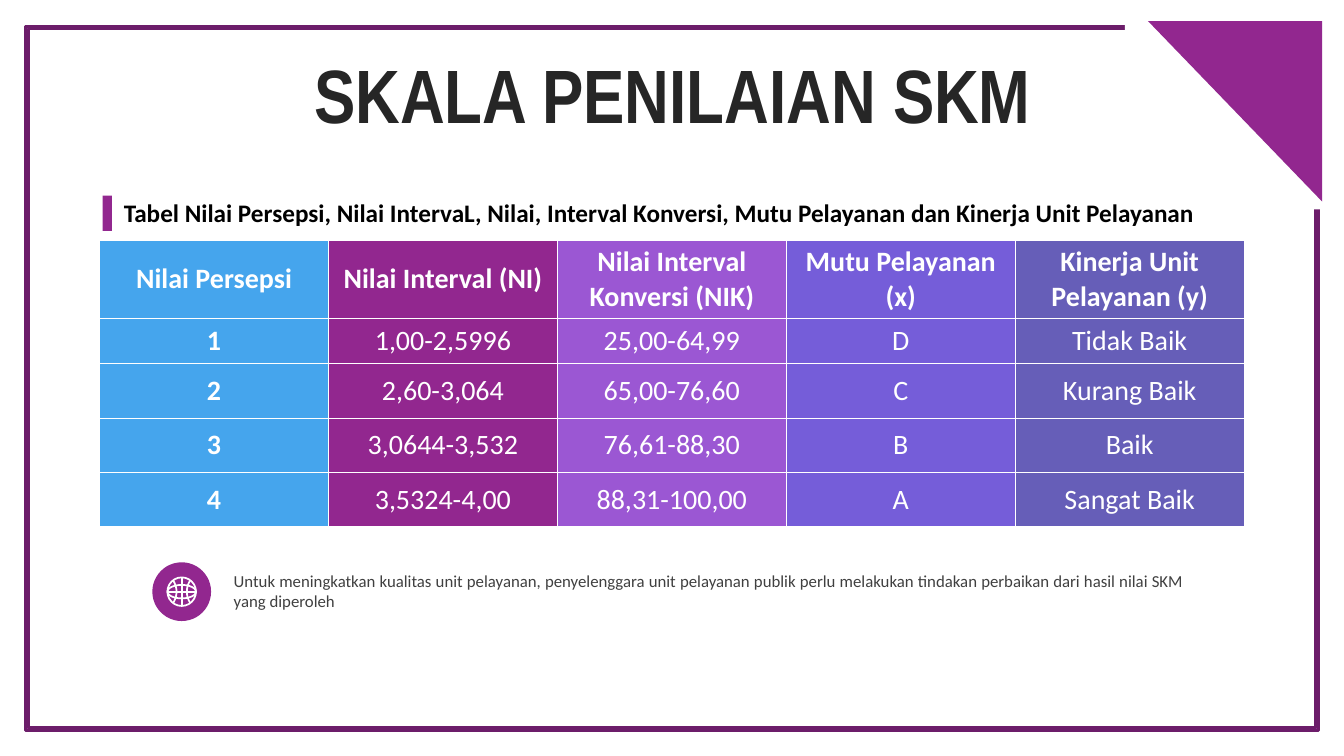
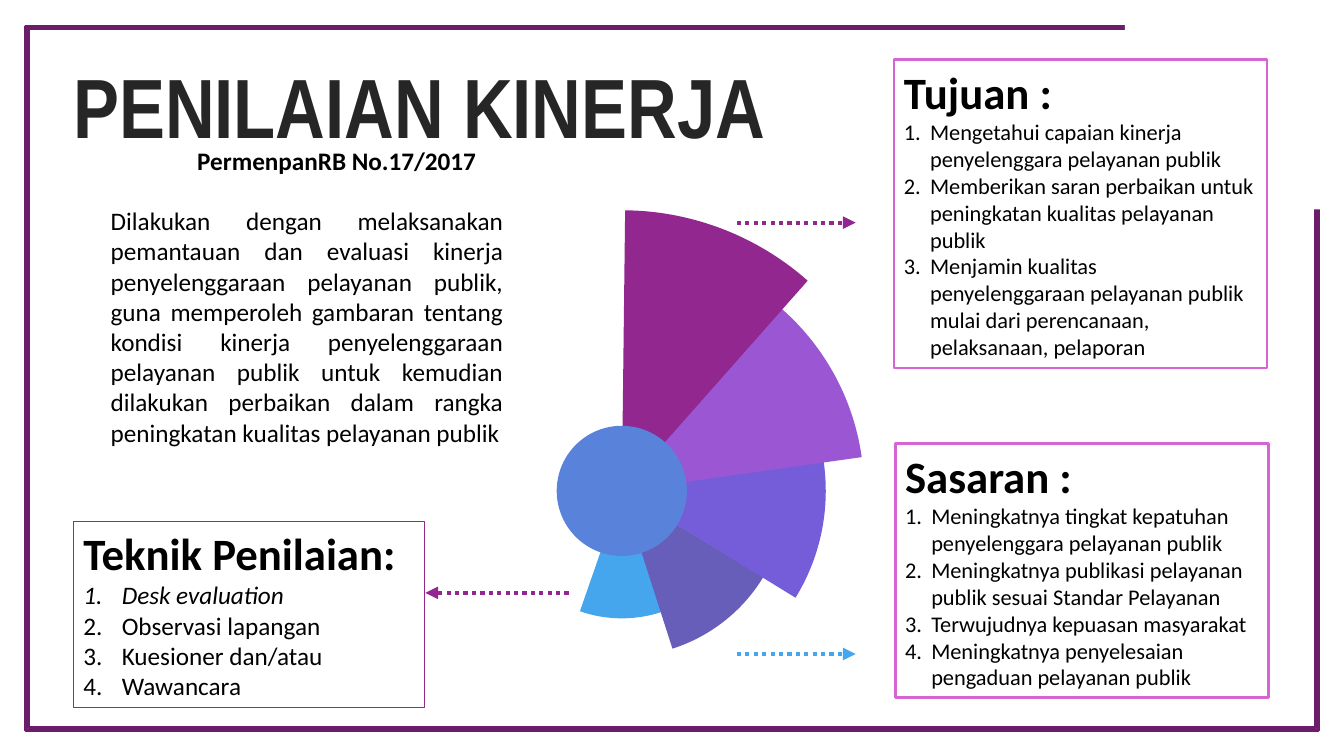
from lxml.etree import SubElement
from pptx import Presentation
from pptx.dml.color import RGBColor
from pptx.enum.dml import MSO_LINE
from pptx.enum.shapes import MSO_CONNECTOR, MSO_SHAPE
from pptx.enum.text import MSO_ANCHOR, PP_ALIGN
from pptx.oxml.ns import qn
from pptx.util import Cm, Pt

# Shared look
PURPLE, EDGE, PINK, WHITE = "92278F", "6C1D6A", "D665D3", "FFFFFF"
LILAC, VIOLET, INDIGO, BLUE, HUB = "9B57D3", "755DD9", "665EB8", "45A5ED", "5982DB"
INK, GREY, DARK = "000000", "404040", "262626"
BODY, HEAD = "Calibri", "Arial Narrow"
MASKS = [(32.39, 0, 1.48, 5.28), (28.35, 0, 5.52, 1.22)]

# Slide 1 content
CAPTION = ("Tabel Nilai Persepsi, Nilai IntervaL, Nilai, Interval Konversi, "
           "Mutu Pelayanan dan Kinerja Unit Pelayanan")
ROWS = [
    ("Nilai Persepsi", "Nilai Interval (NI)", "Nilai Interval Konversi (NIK)",
     "Mutu Pelayanan (x)", "Kinerja Unit Pelayanan (y)"),
    ("1", "1,00-2,5996", "25,00-64,99", "D", "Tidak Baik"),
    ("2", "2,60-3,064", "65,00-76,60", "C", "Kurang Baik"),
    ("3", "3,0644-3,532", "76,61-88,30", "B", "Baik"),
    ("4", "3,5324-4,00", "88,31-100,00", "A", "Sangat Baik"),
]
FILLS = [BLUE, PURPLE, LILAC, VIOLET, INDIGO]
HEIGHTS = [1.98, 1.14, 1.37, 1.37, 1.37]
NOTE = ("Untuk meningkatkan kualitas unit pelayanan, penyelenggara unit pelayanan "
        "publik perlu melakukan tindakan perbaikan dari hasil nilai SKM yang diperoleh")

# Slide 2 content
ABOUT = ("Dilakukan dengan melaksanakan pemantauan dan evaluasi kinerja "
         "penyelenggaraan pelayanan publik, guna memperoleh gambaran tentang kondisi "
         "kinerja penyelenggaraan pelayanan publik untuk kemudian dilakukan perbaikan "
         "dalam rangka peningkatan kualitas pelayanan publik")
WEDGES = [(199.2, BLUE), (162.2, INDIGO), (121.6, VIOLET), (82, LILAC), (41.5, PURPLE)]
ARROWS = [(18.57, 21.56, 16.48, BLUE), (18.57, 21.56, 5.61, PURPLE),
          (14.33, 10.72, 14.94, PURPLE)]
CARDS = [
    dict(title="Tujuan :", box=(22.53, 1.5, 9.4, 7.77), line=(PINK, 1.5),
         size=16, dent=0.66, items=[
             "Mengetahui capaian kinerja penyelenggara pelayanan publik",
             "Memberikan saran perbaikan untuk peningkatan kualitas pelayanan publik",
             "Menjamin kualitas penyelenggaraan pelayanan publik mulai dari "
             "perencanaan, pelaksanaan, pelaporan"]),
    dict(title="Sasaran :", box=(22.56, 11.18, 9.4, 6.4), line=(PINK, 2.25),
         size=16, dent=0.66, items=[
             "Meningkatnya tingkat kepatuhan penyelenggara pelayanan publik",
             "Meningkatnya publikasi pelayanan publik sesuai Standar Pelayanan",
             "Terwujudnya kepuasan masyarakat",
             "Meningkatnya penyelesaian pengaduan pelayanan publik"]),
    dict(title="Teknik Penilaian:", box=(1.85, 13.13, 8.86, 4.7), line=(PURPLE, 0.75),
         size=18, dent=0.97, slant="Desk evaluation", items=[
             "Desk evaluation", "Observasi lapangan", "Kuesioner dan/atau", "Wawancara"]),
]


def rgb(code):
    return RGBColor.from_string(code)


def paint(shape, fill=None, line=None, width=1):
    shape.shadow.inherit = False
    if fill:
        shape.fill.solid()
        shape.fill.fore_color.rgb = rgb(fill)
    else:
        shape.fill.background()
    if line:
        shape.line.color.rgb = rgb(line)
        shape.line.width = Pt(width)
    else:
        shape.line.fill.background()


def draw(slide, kind, box, *look):
    shape = slide.shapes.add_shape(kind, *map(Cm, box))
    paint(shape, *look)
    return shape


def disc(slide, x, y, rx, ry, *look):
    return draw(slide, MSO_SHAPE.OVAL, (x - rx, y - ry, 2 * rx, 2 * ry), *look)


def link(slide, x1, y1, x2, y2, color, width):
    line = slide.shapes.add_connector(MSO_CONNECTOR.STRAIGHT, *map(Cm, (x1, y1, x2, y2)))
    line.line.color.rgb = rgb(color)
    line.line.width = Pt(width)
    SubElement(line._element.spPr, qn("a:effectLst"))
    return line


def style(para, text, size, color=INK, bold=False, align=PP_ALIGN.LEFT, face=BODY):
    para.text = text
    para.alignment = align
    font = para.font
    font.name, font.size, font.bold = face, Pt(size), bold
    font.color.rgb = rgb(color)


def write(slide, box, text, size, anchor=MSO_ANCHOR.TOP, **look):
    frame = slide.shapes.add_textbox(*map(Cm, box)).text_frame
    frame.word_wrap = True
    frame.vertical_anchor = anchor
    style(frame.paragraphs[0], text, size, **look)
    return frame


def begin(deck, title, box, size, align):
    """Blank slide with the broken frame and a title."""
    slide = deck.slides.add_slide(deck.slide_layouts[6])
    rim = draw(slide, MSO_SHAPE.FRAME, (0.64, 0.66, 32.59, 17.75), PURPLE, EDGE, 2)
    rim.adjustments[0] = 0.004
    for mask in MASKS:
        draw(slide, MSO_SHAPE.RECTANGLE, mask, WHITE)
    frame = write(slide, box, title, size, MSO_ANCHOR.MIDDLE, color=DARK, bold=True,
                  align=align, face=HEAD)
    frame.margin_left = frame.margin_right = Cm(0.33)
    frame.margin_top = frame.margin_bottom = Cm(0.18)
    return slide


def edge(cell):
    props = cell._tc.get_or_add_tcPr()
    for side in ("lnL", "lnR", "lnT", "lnB"):
        line = SubElement(props, qn("a:" + side), w=str(Pt(1)))
        SubElement(SubElement(line, qn("a:solidFill")), qn("a:srgbClr"), val=WHITE)


def grid(slide):
    table = slide.shapes.add_table(len(ROWS), len(FILLS), Cm(2.51), Cm(6.05),
                                   Cm(28.83), Cm(sum(HEIGHTS))).table
    table.horz_banding = False
    for col in table.columns:
        col.width = Cm(5.77)
    for r, (row, high) in enumerate(zip(ROWS, HEIGHTS)):
        table.rows[r].height = Cm(high)
        for c, (text, fill) in enumerate(zip(row, FILLS)):
            cell = table.cell(r, c)
            edge(cell)
            cell.fill.solid()
            cell.fill.fore_color.rgb = rgb(fill)
            cell.vertical_anchor = MSO_ANCHOR.MIDDLE
            style(cell.text_frame.paragraphs[0], text, 20, WHITE,
                  r == 0 or c == 0, PP_ALIGN.CENTER)


def globe(slide, x, y):
    disc(slide, x, y, 0.74, 0.74, PURPLE)
    rad = 0.36
    for high in (rad, 0.17):
        disc(slide, x, y, rad, high, None, WHITE, 1.25)
    link(slide, x - rad, y, x + rad, y, WHITE, 1.25)
    link(slide, x, y - rad, x, y + rad, WHITE, 1.25)
    for side in (-1, 1):
        bow = [(Cm(x + side * (0.13 + 0.08 * t * t)), Cm(y + 0.28 * t))
               for t in (k / 5 for k in range(-5, 6))]
        path = slide.shapes.build_freeform(*bow[0])
        path.add_line_segments(bow[1:], close=False)
        paint(path.convert_to_shape(), None, WHITE, 1.25)


def card(slide, title, box, line, size, dent, items, slant=None):
    frame = draw(slide, MSO_SHAPE.RECTANGLE, box, None, *line).text_frame
    frame.word_wrap = True
    frame.vertical_anchor = MSO_ANCHOR.TOP
    style(frame.paragraphs[0], title, 32, bold=True)
    for item in items:
        para = frame.add_paragraph()
        props = para._p.get_or_add_pPr()
        props.set("marL", str(Cm(dent)))
        props.set("indent", str(-Cm(dent)))
        SubElement(props, qn("a:buFont"), typeface="+mj-lt")
        SubElement(props, qn("a:buAutoNum"), type="arabicPeriod")
        style(para, item, size)
        para.font.italic = item == slant


def scale(deck):
    slide = begin(deck, "SKALA PENILAIAN SKM", (0.89, 1.35, 32.13, 2.01), 54,
                  PP_ALIGN.CENTER)
    grid(slide)
    write(slide, (5.64, 14.25, 24.46, 1.27), NOTE, 12, color=GREY, align=PP_ALIGN.JUSTIFY)
    globe(slide, 4.58, 14.91)
    draw(slide, MSO_SHAPE.RECTANGLE, (2.59, 4.93, 0.23, 0.89), PURPLE)
    write(slide, (2.87, 4.85, 28.65, 1.02), CAPTION, 18, MSO_ANCHOR.MIDDLE, bold=True)
    corner = draw(slide, MSO_SHAPE.RIGHT_TRIANGLE, (28.93, 0.53, 4.39, 4.55), PURPLE)
    corner.rotation = 180


def review(deck):
    slide = begin(deck, "PENILAIAN KINERJA", (1.52, 1.63, 19.41, 2.01), 60,
                  PP_ALIGN.LEFT)
    # Fan of wedges, each one step larger
    x, y = 15.67, 12.37
    for k, (turn, fill) in enumerate(WEDGES):
        rad = 3.21 + 0.965 * k
        wedge = draw(slide, MSO_SHAPE.PIE, (x - rad, y - rad, 2 * rad, 2 * rad), fill)
        wedge.adjustments[0], wedge.adjustments[1] = 137.51, 162
        wedge.rotation = turn
    disc(slide, x, y, 1.64, 1.64, HUB)
    # Dotted arrows
    for x1, x2, level, color in ARROWS:
        arrow = link(slide, x1, level, x2, level, color, 3)
        arrow.line.dash_style = MSO_LINE.ROUND_DOT
        SubElement(arrow.line._get_or_add_ln(), qn("a:tailEnd"), type="triangle")
    # Texts
    write(slide, (2.54, 5.05, 10.39, 6.4), ABOUT, 18, align=PP_ALIGN.JUSTIFY)
    write(slide, (4.72, 3.53, 7.62, 1.02), "PermenpanRB No.17/2017", 18, bold=True)
    for part in CARDS:
        card(slide, **part)


def main():
    deck = Presentation()
    deck.slide_width, deck.slide_height = Cm(33.87), Cm(19.05)
    scale(deck)
    review(deck)
    deck.save("out.pptx")


if __name__ == "__main__":
    main()
